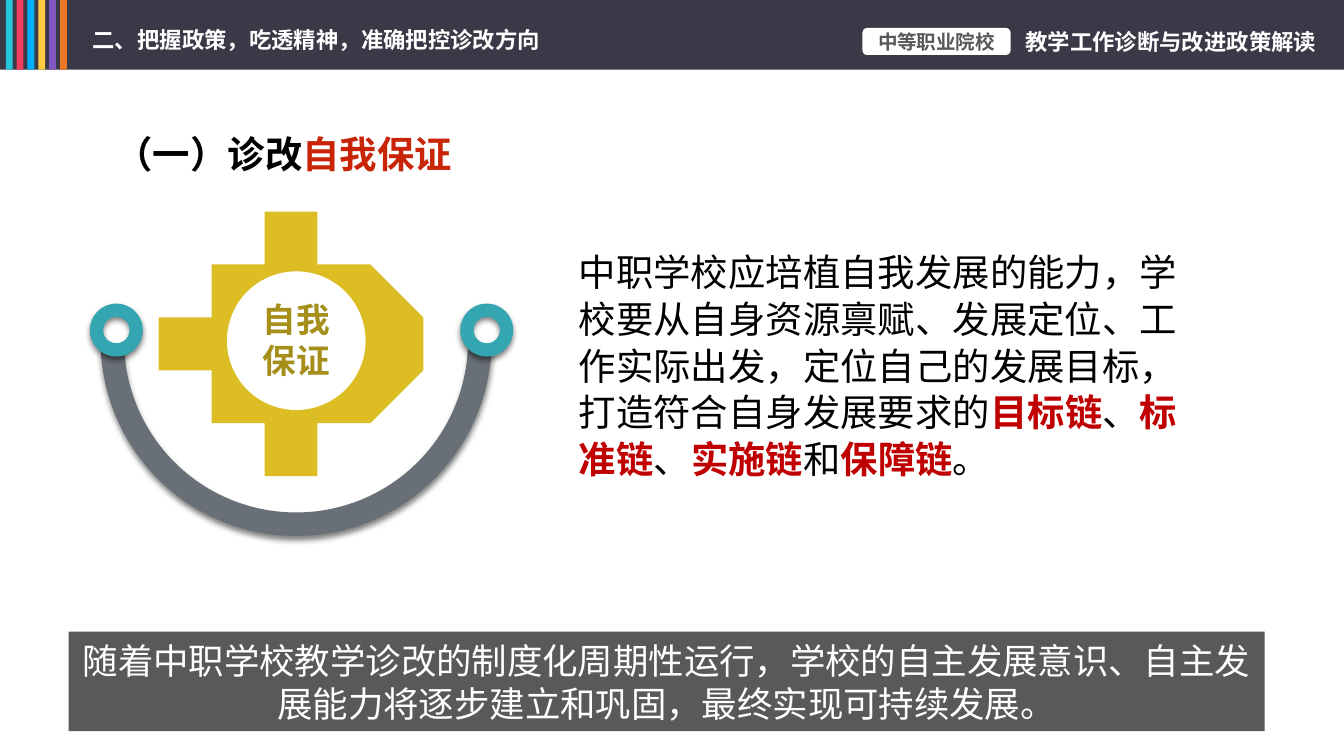
"""Build the slide on self-assurance in teaching diagnosis and improvement."""
from math import cos, hypot, atan2, pi, sin

from lxml.etree import SubElement
from pptx import Presentation
from pptx.dml.color import RGBColor
from pptx.enum.shapes import MSO_SHAPE
from pptx.enum.text import MSO_ANCHOR, PP_ALIGN
from pptx.oxml.ns import qn
from pptx.util import Cm, Pt

FONT = "Noto Sans CJK SC"
WHITE = RGBColor(0xFF, 0xFF, 0xFF)
BLACK = RGBColor(0, 0, 0)
NAVY = RGBColor(0x3A, 0x39, 0x47)
GREY = RGBColor(0x59, 0x59, 0x59)
SLATE = RGBColor(0x68, 0x6F, 0x76)
TEAL = RGBColor(0x34, 0xA6, 0xB2)
GOLD = RGBColor(0xDC, 0xBD, 0x23)
OLIVE = RGBColor(0xA5, 0x8E, 0x1A)
RED = RGBColor(0xC8, 0x25, 0x06)
CRIMSON = RGBColor(0xC0, 0, 0)
STRIPES = [RGBColor.from_string(c) for c in
           ("26C6DA", "F23E5C", "00B0FF", "FFCD40", "7E57C1", "EC7825")]

SECTION = [("二、把握政策，吃透精神，准确把控诊改方向", WHITE, True)]
BADGE = [("中等职业院校", GREY, True)]
COURSE = [("教学工作诊断与改进政策解读", WHITE, True)]
TITLE = [("（一）诊改", BLACK, True), ("自我保证", RED, True)]
GEAR_LABEL = [("自我保证", OLIVE, True)]
BODY = [
    ("中职学校应培植自我发展的能力，学校要从自身资源禀赋、发展定位、工作实际出发，"
     "定位自己的发展目标，打造符合自身发展要求的", BLACK, False),
    ("目标链", CRIMSON, True), ("、", BLACK, False),
    ("标准链", CRIMSON, True), ("、", BLACK, False),
    ("实施链", CRIMSON, True), ("和", BLACK, False),
    ("保障链", CRIMSON, True), ("。", BLACK, False),
]
SUMMARY = [("随着中职学校教学诊改的制度化周期性运行，学校的自主发展意识、自主发展能力"
            "将逐步建立和巩固，最终实现可持续发展。", WHITE, False)]

GEAR_CENTER = (5.6, 6.44)
TEETH = 12
TOOTH = [(-0.22, 1.66), (-0.22, 1.87), (-0.19, 2.1),
         (0.19, 2.1), (0.22, 1.87), (0.22, 1.66)]
ARC_STEPS = 4


def paint(sp, color):
    sp.shadow.inherit = False
    sp.fill.solid()
    sp.fill.fore_color.rgb = color
    sp.line.fill.background()
    return sp


def add_shape(kind, box, color):
    return paint(slide.shapes.add_shape(kind, *map(Cm, box)), color)


def add_box(box):
    return slide.shapes.add_textbox(*map(Cm, box))


def write(sp, runs, size, align=PP_ALIGN.LEFT, wrap=True, spacing=None,
          insets=(0.25, 0.13), anchor=MSO_ANCHOR.MIDDLE):
    tf = sp.text_frame
    tf.word_wrap = wrap
    tf.vertical_anchor = anchor
    tf.margin_left = tf.margin_right = Cm(insets[0])
    tf.margin_top = tf.margin_bottom = Cm(insets[1])
    p = tf.paragraphs[0]
    p.alignment = align
    if spacing:
        p.line_spacing = Pt(spacing)
    for text, color, bold in runs:
        r = p.add_run()
        r.text = text
        r.font.size = Pt(size)
        r.font.bold = bold
        r.font.color.rgb = color
        r.font.name = FONT
        SubElement(r.font._element, qn("a:ea"), typeface=FONT)


def add_shadow(sp):
    effects = sp._element.spPr.find(qn("a:effectLst"))
    shadow = SubElement(effects, qn("a:outerShdw"), blurRad=str(Pt(3)),
                        dist=str(Pt(2)), dir="5400000", rotWithShape="0")
    color = SubElement(shadow, qn("a:srgbClr"), val="000000")
    SubElement(color, qn("a:alpha"), val="50000")


def gear_points():
    pitch = 2 * pi / TEETH
    polar = [(atan2(x, y), hypot(x, y)) for x, y in TOOTH]
    end, root = polar[-1]
    gap = (pitch - 2 * end) / ARC_STEPS
    polar += [(end + gap * i, root) for i in range(1, ARC_STEPS)]
    cx, cy = GEAR_CENTER
    return [(cx + radius * sin(angle + pitch * t), cy - radius * cos(angle + pitch * t))
            for t in range(TEETH) for angle, radius in polar]


prs = Presentation()
prs.slide_width, prs.slide_height = Cm(25.4), Cm(14.29)
slide = prs.slides.add_slide(prs.slide_layouts[6])

add_shape(MSO_SHAPE.RECTANGLE, (-0.03, 0, 25.43, 1.32), NAVY)
for i, color in enumerate(STRIPES):
    add_shape(MSO_SHAPE.RECTANGLE, (0.11 + 0.205 * i, -0.02, 0.13, 1.34), color)
write(add_box((1.5, 0.36, 9.07, 0.76)), SECTION, 12, wrap=False)
badge = add_shape(MSO_SHAPE.ROUNDED_RECTANGLE, (16.3, 0.53, 2.8, 0.51), WHITE)
write(badge, BADGE, 10.5, PP_ALIGN.CENTER, insets=(0.1, 0))
write(add_box((19.35, 0.53, 5.56, 0.51)), COURSE, 12, PP_ALIGN.CENTER,
      wrap=False, insets=(0, 0))
write(add_box((1.9, 2.34, 6.93, 1.12)), TITLE, 20, PP_ALIGN.CENTER, wrap=False)

points = gear_points()
builder = slide.shapes.build_freeform(*points[0], scale=Cm(1))
builder.add_line_segments(points[1:], close=True)
paint(builder.convert_to_shape(), GOLD)
cx, cy = GEAR_CENTER
add_shape(MSO_SHAPE.OVAL, (cx - 1.31, cy - 1.31, 2.62, 2.62), WHITE)
label = add_shape(MSO_SHAPE.RECTANGLE, (4.7, 5.54, 1.8, 1.73), WHITE)
write(label, GEAR_LABEL, 18, PP_ALIGN.CENTER, spacing=22, insets=(0.18, 0.1))

write(add_box((10.69, 4.55, 11.99, 4.7)), BODY, 20, spacing=25, anchor=MSO_ANCHOR.TOP)
summary = add_shape(MSO_SHAPE.RECTANGLE, (1.3, 11.94, 22.6, 1.88), GREY)
write(summary, SUMMARY, 19, PP_ALIGN.CENTER, spacing=23)

arc = add_shape(MSO_SHAPE.BLOCK_ARC, (1.9, 2.74, 7.39, 7.39), SLATE)
arc.rotation = 180
for i, value in enumerate((109.38, 214.4, 0.06)):
    arc.adjustments[i] = value
add_shadow(arc)
for x in (8.7, 1.7):
    add_shadow(add_shape(MSO_SHAPE.DONUT, (x, 5.74, 1, 1), TEAL))

prs.save("out.pptx")
